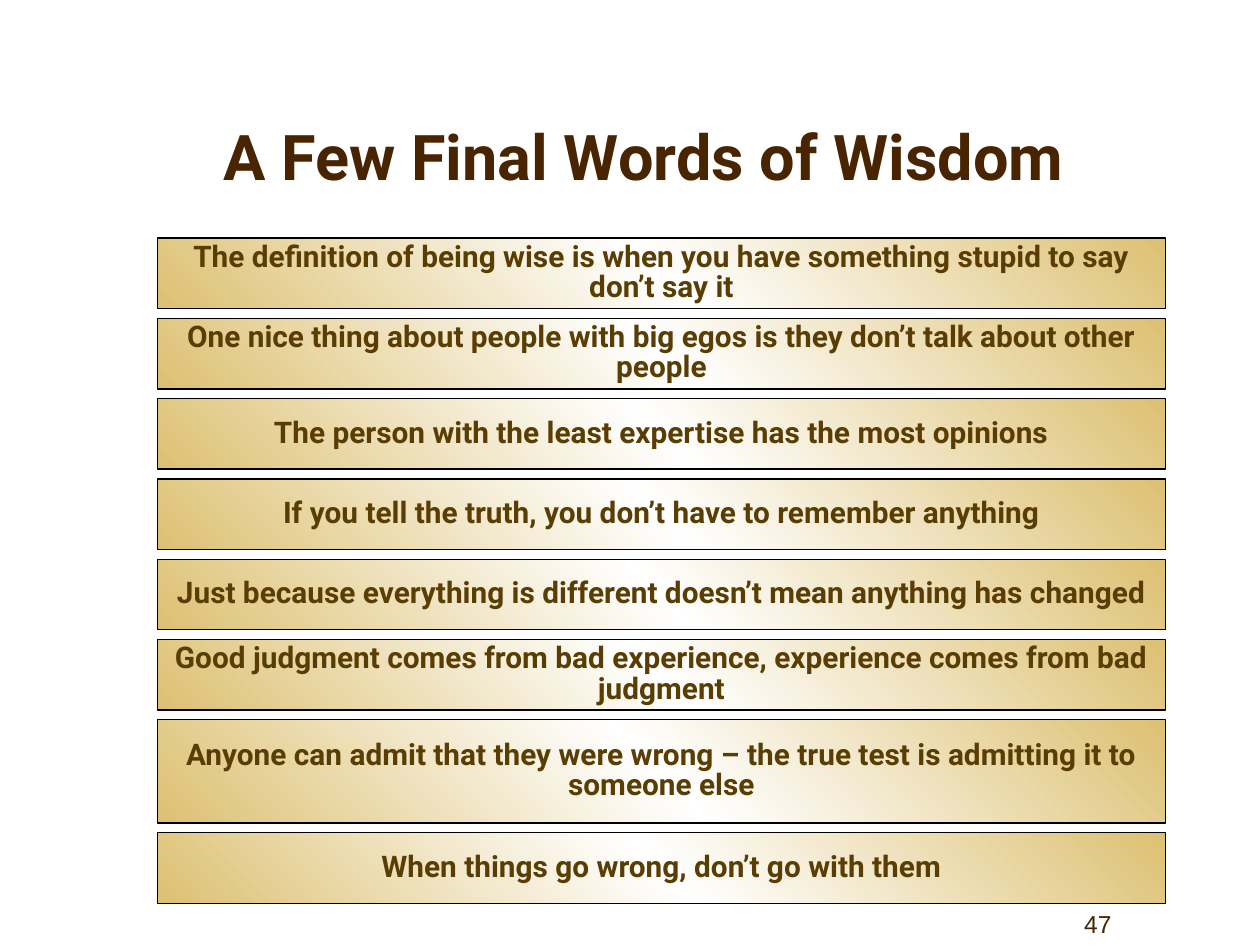
import copy
from dataclasses import dataclass

import pptx
import pptx.dml.color
import pptx.enum.shapes
import pptx.enum.text
import pptx.util
from pptx.util import Inches

RGB = pptx.dml.color.RGBColor.from_string
ALIGN = pptx.enum.text.PP_ALIGN
ANCHOR = pptx.enum.text.MSO_ANCHOR


@dataclass(frozen=True)
class Theme:
    heading_font: str = "Roboto"
    number_font: str = "Arial"
    heading: str = "482400"
    saying: str = "5A3D02"
    gold: str = "DCC072"
    white: str = "FFFFFF"
    border: str = "000000"
    title_size: int = 36
    saying_size: int = 17
    number_size: int = 14


@dataclass(frozen=True)
class Saying:
    text: str
    height: float = 0.56


THEME = Theme()
LEFT, WIDTH = 1.25, 8
TOP, BOTTOM = 1.89, 7.17
SAYINGS = [
    Saying("The definition of being wise is when you have something stupid to say don’t say it"),
    Saying("One nice thing about people with big egos is they don’t talk about other people"),
    Saying("The person with the least expertise has the most opinions"),
    Saying("If you tell the truth, you don’t have to remember anything"),
    Saying("Just because everything is different doesn’t mean anything has changed"),
    Saying("Good judgment comes from bad experience, experience comes from bad judgment"),
    Saying("Anyone can admit that they were wrong – the true test is admitting it to someone else", 0.82),
    Saying("When things go wrong, don’t go with them"),
]


def set_text(sp, text: str, font: str, size: int, color: str, bold: bool, align, anchor):
    """Fill a shape with one styled paragraph and return the paragraph."""
    tf = sp.text_frame
    tf.word_wrap = True
    tf.vertical_anchor = anchor
    p = tf.paragraphs[0]
    p.text = text
    p.alignment = align
    p.font.name = font
    p.font.size = pptx.util.Pt(size)
    p.font.bold = bold
    p.font.color.rgb = RGB(color)
    return p


def fill_gold(sp) -> None:
    """Diagonal gradient: gold at both corners, white in the middle."""
    sp.fill.gradient()
    sp.fill.gradient_angle = 45
    stops = sp._element.spPr.find(".//" + pptx.oxml.ns.qn("a:gsLst"))
    stops.append(copy.deepcopy(stops[0]))
    looks = [(0, THEME.gold), (0.5, THEME.white), (1, THEME.gold)]
    for stop, (position, color) in zip(sp.fill.gradient_stops, looks):
        stop.position = position
        stop.color.rgb = RGB(color)


def add_saying(s, saying: Saying, top: float) -> None:
    sp = s.shapes.add_shape(
        pptx.enum.shapes.MSO_SHAPE.RECTANGLE,
        Inches(LEFT), Inches(top), Inches(WIDTH), Inches(saying.height))
    sp.shadow.inherit = False
    fill_gold(sp)
    sp.line.color.rgb = RGB(THEME.border)
    sp.line.width = pptx.util.Pt(0.75)
    p = set_text(sp, saying.text, THEME.heading_font, THEME.saying_size,
                 THEME.saying, True, ALIGN.CENTER, ANCHOR.MIDDLE)
    p.line_spacing = 0.85


def main() -> None:
    prs = pptx.Presentation()
    prs.slide_width, prs.slide_height = Inches(10), Inches(7.5)
    s = prs.slides.add_slide(prs.slide_layouts[6])

    # Slide number and title
    number = s.shapes.add_textbox(Inches(7.67), Inches(7), Inches(2.08), Inches(0.5))
    set_text(number, "47", THEME.number_font, THEME.number_size,
             THEME.heading, False, ALIGN.RIGHT, ANCHOR.BOTTOM)
    # The number ends well inside its box
    number.width = Inches(1.25)
    title = s.shapes.add_textbox(Inches(0.92), Inches(1.08), Inches(8.5), Inches(0.5))
    set_text(title, "A Few Final Words of Wisdom ", THEME.heading_font, THEME.title_size,
             THEME.heading, True, ALIGN.CENTER, ANCHOR.BOTTOM)

    # Stack of sayings with equal gaps
    gap = (BOTTOM - TOP - sum(x.height for x in SAYINGS)) / (len(SAYINGS) - 1)
    top = TOP
    for saying in SAYINGS:
        add_saying(s, saying, top)
        top += saying.height + gap

    prs.save("out.pptx")


if __name__ == "__main__":
    main()
